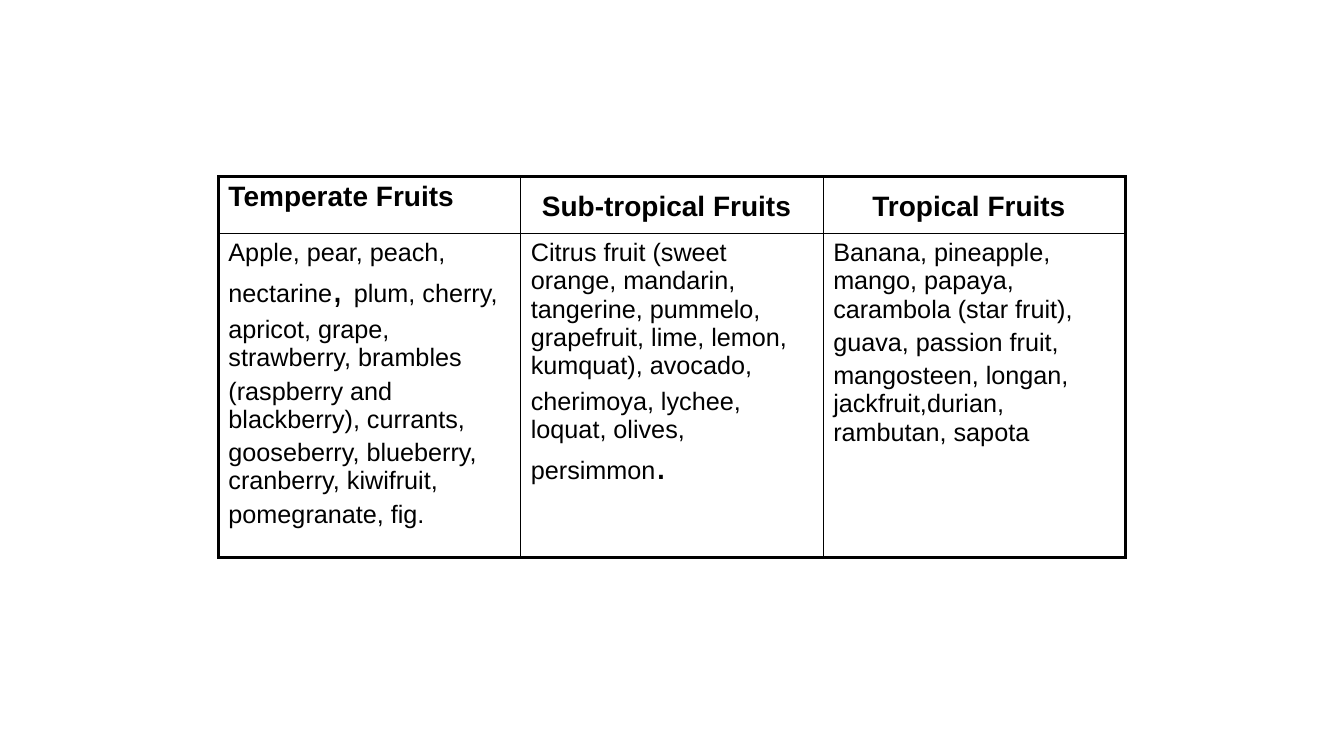
from lxml import etree
from pptx import Presentation
from pptx.dml.color import RGBColor
from pptx.enum.text import PP_ALIGN
from pptx.oxml.ns import qn
from pptx.util import Pt

BLACK = RGBColor(0, 0, 0)
FONT = "Arial"
LEFT, CENTER = PP_ALIGN.LEFT, PP_ALIGN.CENTER
HEADING_SIZE, BODY_SIZE, LARGE_SIZE = 20, 18, 28
OUTER, INNER = Pt(2.25), Pt(1)
BLANK_LAYOUT = 6
COLUMN_WIDTH = Pt(216)
ROW_HEIGHTS = (Pt(41), Pt(231))

HEADINGS = [
    (LEFT, [("Temperate Fruits", HEADING_SIZE)]),
    (CENTER, [("Sub-tropical Fruits", HEADING_SIZE), (" ", LARGE_SIZE)]),
    (CENTER, [("Tropical Fruits", HEADING_SIZE), (" ", LARGE_SIZE)]),
]
FRUITS = [
    [
        [("Apple, pear, peach, nectarine", BODY_SIZE), (", ", LARGE_SIZE),
         ("plum, cherry,", BODY_SIZE)],
        [("apricot, grape, strawberry, brambles", BODY_SIZE)],
        [("(raspberry and blackberry), currants,", BODY_SIZE)],
        [("gooseberry, blueberry, cranberry, kiwifruit,", BODY_SIZE)],
        [("pomegranate, fig.", BODY_SIZE)],
    ],
    [
        [("Citrus fruit (sweet orange, mandarin, tangerine, pummelo, "
          "grapefruit, lime, lemon, kumquat), avocado,", BODY_SIZE)],
        [("cherimoya, lychee, loquat, olives, persimmon", BODY_SIZE),
         (".", LARGE_SIZE)],
    ],
    [
        [("Banana, pineapple, mango, papaya, carambola (star fruit),", BODY_SIZE)],
        [("guava, passion fruit,", BODY_SIZE)],
        [("mangosteen, longan, jackfruit,durian, rambutan, sapota", BODY_SIZE)],
    ],
]


def space_before(paragraph, percent):
    """Set the space before a paragraph as a share of its text size."""
    spacing = etree.SubElement(paragraph._p.get_or_add_pPr(), qn("a:spcBef"))
    etree.SubElement(spacing, qn("a:spcPct"), val=str(percent * 1000))


def write_paragraphs(cell, paragraphs, align=LEFT):
    """Fill a cell with paragraphs of sized runs."""
    frame = cell.text_frame
    for index, pieces in enumerate(paragraphs):
        paragraph = frame.add_paragraph() if index else frame.paragraphs[0]
        paragraph.alignment = align
        space_before(paragraph, 20)
        for text, size in pieces:
            run = paragraph.add_run()
            run.text = text
            run.font.name = FONT
            run.font.size = Pt(size)
            run.font.bold = size == HEADING_SIZE
            run.font.color.rgb = BLACK


def draw_borders(cell, widths):
    """Draw black cell borders, with widths given by side tag."""
    properties = cell._tc.get_or_add_tcPr()
    for tag, width in widths.items():
        line = etree.SubElement(properties, qn(tag), w=str(int(width)))
        fill = etree.SubElement(line, qn("a:solidFill"))
        etree.SubElement(fill, qn("a:srgbClr"), val=str(BLACK))


def rule_table(table):
    """Give the table a heavy frame, thin inner rules and no fill."""
    last_row, last_column = len(table.rows) - 1, len(table.columns) - 1
    for row in range(last_row + 1):
        for column in range(last_column + 1):
            cell = table.cell(row, column)
            draw_borders(cell, {
                "a:lnL": OUTER if column == 0 else INNER,
                "a:lnR": OUTER if column == last_column else INNER,
                "a:lnT": OUTER if row == 0 else INNER,
                "a:lnB": OUTER if row == last_row else INNER,
            })
            cell.fill.background()


def add_fruit_table(slide):
    """Add the table of fruits by climate."""
    table = slide.shapes.add_table(
        len(ROW_HEIGHTS), len(HEADINGS), Pt(156), Pt(126),
        COLUMN_WIDTH * len(HEADINGS), sum(ROW_HEIGHTS)).table
    table.horz_banding = False
    for row, height in zip(table.rows, ROW_HEIGHTS):
        row.height = height
    for column, ((align, heading), fruits) in enumerate(zip(HEADINGS, FRUITS)):
        table.columns[column].width = COLUMN_WIDTH
        write_paragraphs(table.cell(0, column), [heading], align)
        write_paragraphs(table.cell(1, column), fruits)
    rule_table(table)


def main():
    """Build the slide and save it."""
    presentation = Presentation()
    presentation.slide_width = Pt(960)
    presentation.slide_height = Pt(540)
    layout = presentation.slide_layouts[BLANK_LAYOUT]
    add_fruit_table(presentation.slides.add_slide(layout))
    presentation.save("out.pptx")


if __name__ == "__main__":
    main()
